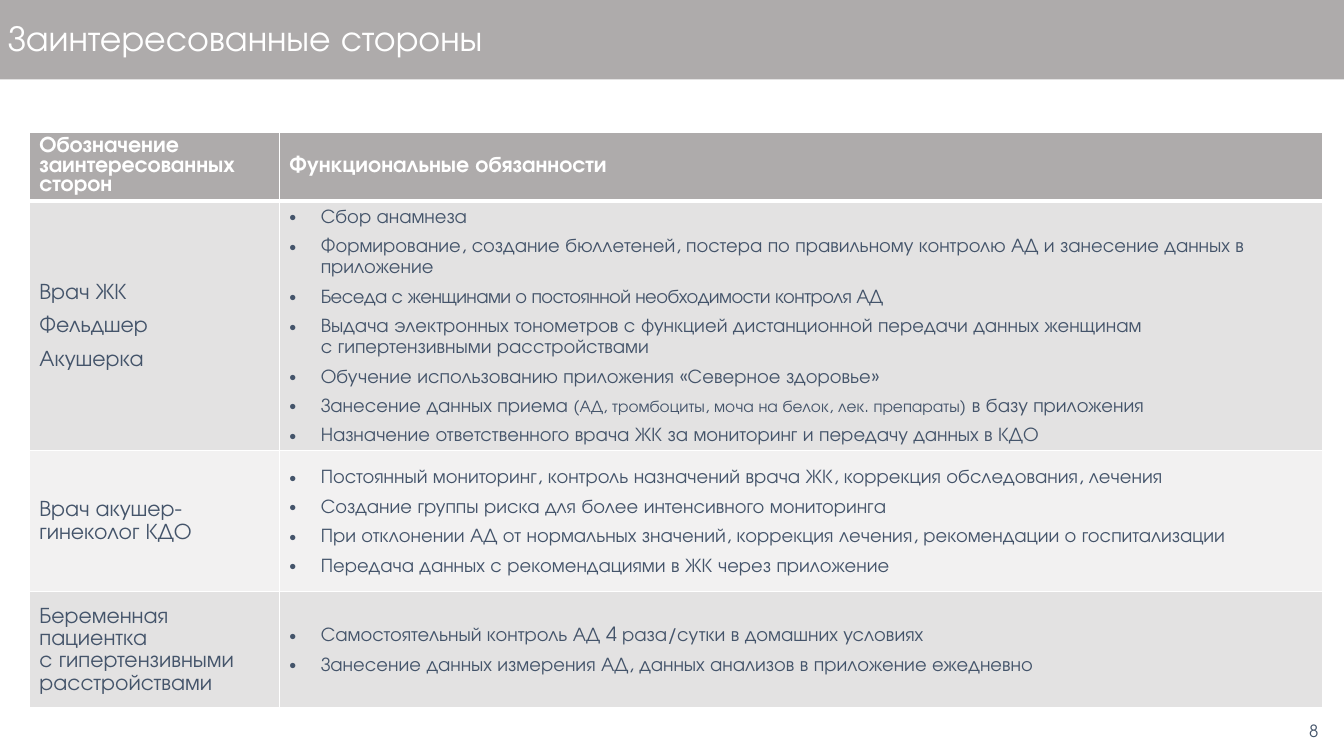
from lxml.etree import SubElement as Sub
from pptx import Presentation
from pptx.dml.color import RGBColor as Rgb
from pptx.enum.shapes import MSO_SHAPE as Shape
from pptx.enum.text import MSO_ANCHOR as Anchor, PP_ALIGN as Align
from pptx.oxml.ns import qn
from pptx.util import Cm, Pt

FACE = "TeX Gyre Adventor"
HUES = {"bar": "AEABAB", "dark": "E3E2E2", "light": "F2F1F1",
        "ink": "44546A", "white": "FFFFFF"}

TITLE = "Заинтересованные стороны"
PAGE = "8"
HEAD = (["Обозначение", "заинтересованных", "сторон"],
        ["Функциональные обязанности"])
# A duty is plain text or a list of (text, size, spacing) runs.
BODY = [
    (["Врач ЖК", "Фельдшер", "Акушерка"],
     ["Сбор анамнеза",
      "Формирование, создание бюллетеней, постера по правильному контролю АД "
      "и занесение данных в приложение",
      [("Беседа с женщинами о постоянной необходимости контроля АД", 14, -0.4)],
      "Выдача электронных тонометров с функцией дистанционной передачи данных "
      "женщинам \vс гипертензивными расстройствами",
      "Обучение использованию приложения «Северное здоровье»",
      [("Занесение данных приема ", 14, 0),
       ("(АД, тромбоциты, моча на белок, лек. препараты)", 12, 0),
       (" в базу приложения", 14, 0)],
      "Назначение ответственного врача ЖК за мониторинг и передачу данных в КДО"]),
    (["Врач акушер-гинеколог КДО"],
     ["Постоянный мониторинг, контроль назначений врача ЖК, коррекция "
      "обследования, лечения",
      "Создание группы риска для более интенсивного мониторинга",
      "При отклонении АД от нормальных значений, коррекция лечения, "
      "рекомендации о госпитализации",
      "Передача данных с рекомендациями в ЖК через приложение"]),
    (["Беременная пациентка \vс гипертензивными расстройствами"],
     ["Самостоятельный контроль АД 4 раза/сутки в домашних условиях",
      "Занесение данных измерения АД, данных анализов в приложение ежедневно"]),
]
COLS = (6.3, 26.29)
ROWS = (1.65, 6.25, 3.56, 2.92)
WIDE, HIGH = 33.87, 19.05
INDENT = Cm(0.79)


def style(font, size, hue, bold=False):
    font.name, font.size, font.bold = FACE, Pt(size), bold
    font.color.rgb = Rgb.from_string(HUES[hue])


def bullet(para):
    props = para._p.get_or_add_pPr()
    props.set("marL", str(INDENT))
    props.set("indent", str(-INDENT))
    Sub(Sub(props, qn("a:buClr")), qn("a:srgbClr"), val=HUES["ink"])
    Sub(props, qn("a:buFont"), typeface="Arial")
    Sub(props, qn("a:buChar"), char="•")


def write(para, item):
    if isinstance(item, str):
        para.text = item
        return
    for text, size, gap in item:
        run = para.add_run()
        run.text = text
        run.font.size = Pt(size)
        if gap:
            run._r.get_or_add_rPr().set("spc", str(round(gap * 100)))


def edge(cell, head):
    """Draw white borders, with a thick one below the heading."""
    props = cell._tc.get_or_add_tcPr()
    for side in "LRTB":
        wide = Pt(3 if head and side == "B" else 1)
        line = Sub(props, qn("a:ln" + side), w=str(wide))
        Sub(Sub(line, qn("a:solidFill")), qn("a:srgbClr"), val=HUES["white"])


def fill(cell, items, back, size, hue, lead, after, head=False, dots=False):
    edge(cell, head)
    cell.fill.solid()
    cell.fill.fore_color.rgb = Rgb.from_string(HUES[back])
    cell.vertical_anchor = Anchor.MIDDLE
    frame = cell.text_frame
    for i, item in enumerate(items):
        para = frame.add_paragraph() if i else frame.paragraphs[0]
        write(para, item)
        if dots:
            bullet(para)
        para.line_spacing, para.space_after = Pt(lead), Pt(after)
        style(para.font, size, hue, head)


def label(shape, text, size, hue, align):
    frame = shape.text_frame
    frame.word_wrap = True
    frame.vertical_anchor = Anchor.MIDDLE
    para = frame.paragraphs[0]
    para.text, para.alignment = text, align
    style(para.font, size, hue)
    return frame


def main():
    deck = Presentation()
    deck.slide_width, deck.slide_height = Cm(WIDE), Cm(HIGH)
    shapes = deck.slides.add_slide(deck.slide_layouts[6]).shapes

    page = shapes.add_textbox(Cm(32.36), Cm(17.83), Cm(1.5), Cm(1.19))
    label(page, PAGE, 12, "ink", Align.CENTER)

    bar = shapes.add_shape(Shape.RECTANGLE, 0, 0, Cm(WIDE), Cm(2))
    bar.shadow.inherit = False
    bar.fill.solid()
    bar.fill.fore_color.rgb = Rgb.from_string(HUES["bar"])
    bar.line.fill.background()
    frame = label(bar, TITLE, 26, "white", Align.LEFT)
    frame.margin_left = Cm(0.2)
    frame.paragraphs[0].line_spacing = 0.9

    table = shapes.add_table(len(ROWS), len(COLS), Cm(0.74), Cm(3.33),
                             Cm(sum(COLS)), Cm(sum(ROWS))).table
    for col, wide in zip(table.columns, COLS):
        col.width = Cm(wide)
    for row, high in zip(table.rows, ROWS):
        row.height = Cm(high)
    for i, items in enumerate(HEAD):
        fill(table.cell(0, i), items, "bar", 16, "white", 14, 0, head=True)
    for i, (who, duties) in enumerate(BODY, 1):
        back = "dark" if i % 2 else "light"
        fill(table.cell(i, 0), who, back, 16, "ink", 16, 8)
        fill(table.cell(i, 1), duties, back, 14, "ink", 15, 6, dots=True)

    deck.save("out.pptx")


if __name__ == "__main__":
    main()
